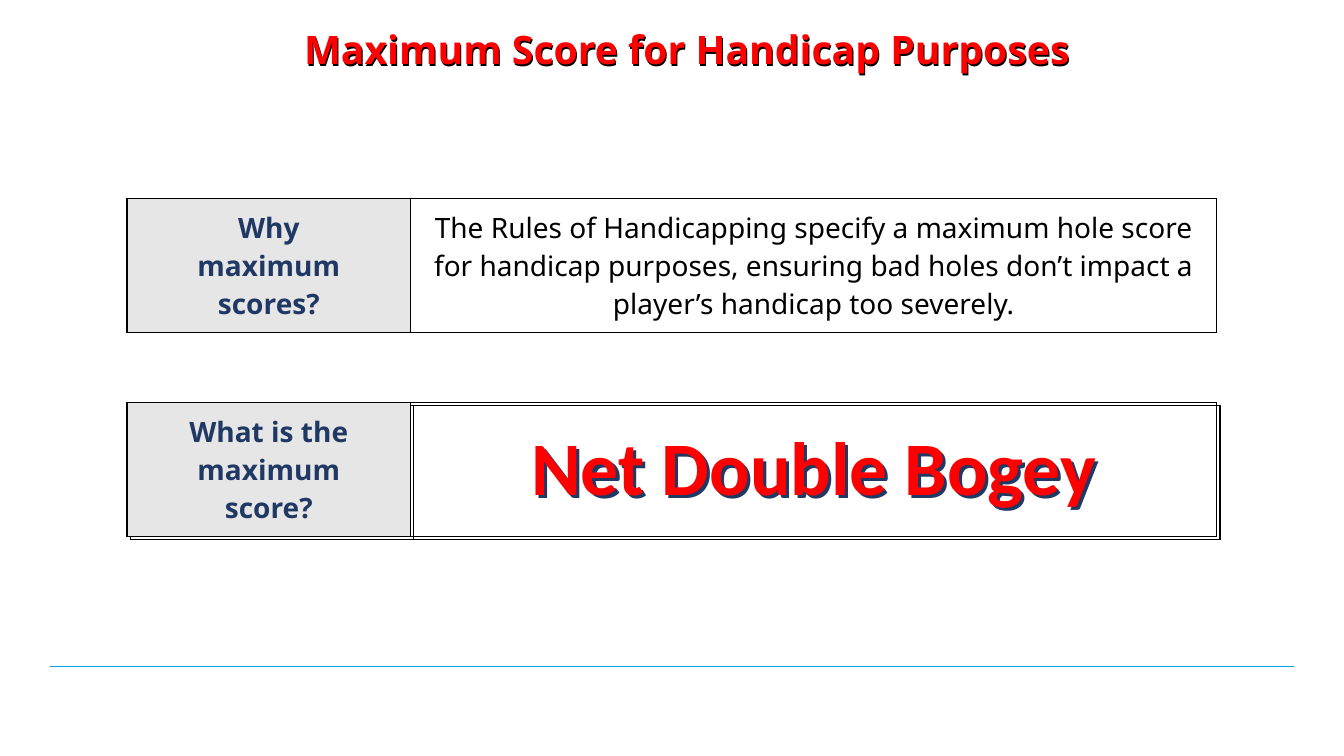
from dataclasses import dataclass
from typing import Optional

from lxml import etree
from pptx import Presentation
from pptx.dml.color import RGBColor
from pptx.enum.shapes import MSO_CONNECTOR
from pptx.enum.text import MSO_ANCHOR, MSO_AUTO_SIZE, PP_ALIGN
from pptx.oxml.ns import qn
from pptx.util import Pt

CENTER = PP_ALIGN.CENTER
MIDDLE = MSO_ANCHOR.MIDDLE
NO_AUTOFIT = MSO_AUTO_SIZE.NONE
STRAIGHT = MSO_CONNECTOR.STRAIGHT
EMU_PER_PX = 9525
TITLE_ONLY = 5


@dataclass(frozen=True)
class Theme:
    red: str = "FF0000"
    black: str = "000000"
    white: str = "FFFFFF"
    navy: str = "203864"
    gray: str = "E7E6E6"
    blue: str = "009FDF"
    sans: str = "Noto Sans"
    display: str = "Calibri"
    title_pt: int = 28
    body_pt: int = 20
    answer_pt: int = 54
    border_pt: float = 1
    rule_pt: float = 0.5


THEME = Theme()


@dataclass(frozen=True)
class Style:
    size: int
    color: str
    font: str = THEME.sans
    bold: bool = True


@dataclass(frozen=True)
class CellSpec:
    lines: tuple[str, ...] = ()
    style: Optional[Style] = None
    fill: Optional[str] = None


@dataclass(frozen=True)
class Panel:
    left: int
    top: int
    question: CellSpec
    answer: CellSpec


TITLE = "Maximum Score for Handicap Purposes"
ANSWER = ("Net Double Bogey",)
REASON = ("The Rules of Handicapping specify a maximum hole score for handicap purposes, "
          "ensuring bad holes don’t impact a player’s handicap too severely.",)
QUESTION_W, ANSWER_W, PANEL_H = 270, 768, 128
LABEL = Style(THEME.body_pt, THEME.navy)
BODY = Style(THEME.body_pt, THEME.black, bold=False)

PANELS = (
    Panel(124, 386, CellSpec(),
          CellSpec(ANSWER, Style(THEME.answer_pt, THEME.navy, THEME.display))),
    Panel(121, 189, CellSpec(("Why", "maximum", "scores?"), LABEL, THEME.gray),
          CellSpec(REASON, BODY, THEME.white)),
    Panel(121, 383, CellSpec(("What is the", "maximum", "score?"), LABEL, THEME.gray),
          CellSpec(ANSWER, Style(THEME.answer_pt, THEME.red, THEME.display))),
)


def px(n: int) -> int:
    return n * EMU_PER_PX


def write_lines(p, lines: tuple[str, ...], style: Style) -> None:
    p.alignment = CENTER
    for i, line in enumerate(lines):
        if i:
            p.add_line_break()
        r = p.add_run()
        r.text = line
        r.font.name = style.font
        r.font.size = Pt(style.size)
        r.font.bold = style.bold
        r.font.color.rgb = RGBColor.from_string(style.color)


def format_title(sp, left: int, top: int, color: str) -> None:
    sp.left, sp.top, sp.width, sp.height = px(left), px(top), px(1280), px(96)
    tf = sp.text_frame
    tf.word_wrap = True
    tf.auto_size = NO_AUTOFIT
    tf.vertical_anchor = MIDDLE
    tf.margin_left, tf.margin_right = px(38), px(10)
    tf.margin_top = tf.margin_bottom = px(5)
    p = tf.paragraphs[0]
    p.line_spacing = 0.9
    write_lines(p, (TITLE,), Style(THEME.title_pt, color))


def set_borders(cell) -> None:
    tc_pr = cell._tc.get_or_add_tcPr()
    for i, side in enumerate(("lnL", "lnR", "lnT", "lnB")):
        ln = etree.Element(qn(f"a:{side}"), w=str(Pt(THEME.border_pt)))
        fill = etree.SubElement(ln, qn("a:solidFill"))
        etree.SubElement(fill, qn("a:srgbClr"), val=THEME.black)
        tc_pr.insert(i, ln)


def fill_cell(cell, spec: CellSpec) -> None:
    cell.vertical_anchor = MIDDLE
    if spec.fill:
        cell.fill.solid()
        cell.fill.fore_color.rgb = RGBColor.from_string(spec.fill)
    else:
        cell.fill.background()
    set_borders(cell)
    if spec.style:
        write_lines(cell.text_frame.paragraphs[0], spec.lines, spec.style)


def add_panel(s, panel: Panel) -> None:
    table = s.shapes.add_table(1, 2, px(panel.left), px(panel.top),
                               px(QUESTION_W + ANSWER_W), px(PANEL_H)).table
    table.first_row = table.horz_banding = False
    table.columns[0].width = px(QUESTION_W)
    table.columns[1].width = px(ANSWER_W)
    fill_cell(table.cell(0, 0), panel.question)
    fill_cell(table.cell(0, 1), panel.answer)


def add_rule(s, left: int, right: int, y: int) -> None:
    rule = s.shapes.add_connector(STRAIGHT, px(left), px(y), px(right), px(y))
    rule.line.color.rgb = RGBColor.from_string(THEME.blue)
    rule.line.width = Pt(THEME.rule_pt)
    etree.SubElement(rule._element.spPr, qn("a:effectLst"))


def main() -> None:
    prs = Presentation()
    prs.slide_width, prs.slide_height = px(1280), px(720)
    s = prs.slides.add_slide(prs.slide_layouts[TITLE_ONLY])
    add_rule(s, 48, 1232, 635)
    title_shadow = s.shapes.add_textbox(0, 0, px(1280), px(96))
    format_title(title_shadow, 1, 3, THEME.black)
    title = s.shapes.title
    format_title(title, 0, 1, THEME.red)
    title_shadow._element.addnext(title._element)
    for panel in PANELS:
        add_panel(s, panel)
    prs.save("out.pptx")


if __name__ == "__main__":
    main()
